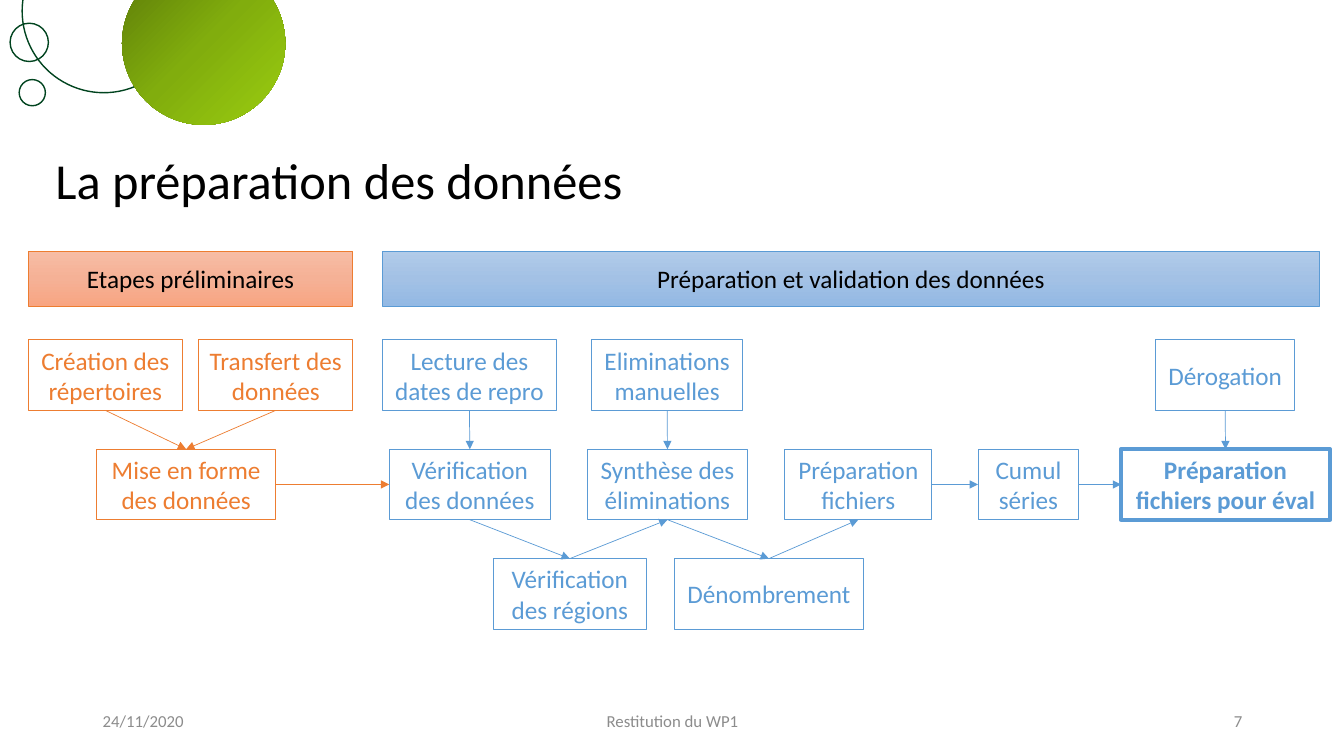
from copy import deepcopy

from pptx import Presentation
from pptx.dml.color import RGBColor
from pptx.enum.shapes import MSO_CONNECTOR as CONN, MSO_SHAPE as SHAPE
from pptx.enum.text import MSO_ANCHOR as ANCHOR, PP_ALIGN as ALIGN
from pptx.oxml.ns import qn
from pptx.util import Inches, Pt

ORANGE, BLUE, BLACK, GREY, GREEN = "ED7D31", "5B9BD5", "000000", "8C8C8C", "01441F"
BOTTOM, RIGHT, TOP, LEFT = 2, 3, 0, 1


def rgb(value):
    return RGBColor.from_string(value)


class Deck:
    """Style and current slide; lengths are percentages of the slide's size."""
    font = "Calibri"

    def __init__(self, prs):
        self.w, self.h = prs.slide_width, prs.slide_height
        self.s = prs.slides.add_slide(prs.slide_layouts[6])

    def area(self, x, y, w, h):
        return [int(v * side / 100) for v, side in
                ((x, self.w), (y, self.h), (w, self.w), (h, self.h))]

    def set_text(self, sp, text, size, color, align=ALIGN.CENTER, bold=False):
        tf = sp.text_frame
        tf.text = text
        tf.word_wrap = True
        tf.vertical_anchor = ANCHOR.MIDDLE
        p = tf.paragraphs[0]
        p.alignment = align
        f = p.runs[0].font
        f.name, f.size, f.bold = self.font, Pt(size), bold
        f.color.rgb = rgb(color)
        return p

    def gradient(self, sp, colors, angle):
        sp.fill.gradient()
        sp.fill.gradient_angle = -angle % 360
        stops = sp._element.spPr.find(qn("a:gradFill")).find(qn("a:gsLst"))
        stops.insert(1, deepcopy(stops[0]))
        for i, (stop, color) in enumerate(zip(sp.fill.gradient_stops, colors)):
            stop.position = i / 2
            stop.color.rgb = rgb(color)

    def shape(self, kind, area, line=None, width=1, colors=None, angle=90):
        sp = self.s.shapes.add_shape(kind, *area)
        sp.shadow.inherit = False
        if colors:
            self.gradient(sp, colors, angle)
        else:
            sp.fill.background()
        if line:
            sp.line.color.rgb = rgb(line)
            sp.line.width = Pt(width)
        else:
            sp.line.fill.background()
        return sp

    def circle(self, x, y, size, **style):
        left, top, d, _ = self.area(x, y, size, 0)
        return self.shape(SHAPE.OVAL, (left, top, d, d), **style)

    def box(self, text, x, y, w, h, line, width=0.75, color=None, bold=False, colors=None):
        sp = self.shape(SHAPE.RECTANGLE, self.area(x, y, w, h), line, width, colors)
        self.set_text(sp, text, 18, color or line, bold=bold)
        return sp

    def label(self, text, x, y, w, h, size, color, align):
        sp = self.s.shapes.add_textbox(*self.area(x, y, w, h))
        return self.set_text(sp, text, size, color, align)

    def arrow(self, a, a_side, b, b_side, color):
        c = self.s.shapes.add_connector(CONN.STRAIGHT, 0, 0, 0, 0)
        c.begin_connect(a, a_side)
        c.end_connect(b, b_side)
        c.line.color.rgb = rgb(color)
        c.line.width = Pt(0.5)
        spPr = c._element.spPr
        ln = spPr.find(qn("a:ln"))
        ln.append(ln.makeelement(qn("a:tailEnd"), {"type": "triangle"}))
        spPr.append(spPr.makeelement(qn("a:effectLst"), {}))


def main():
    prs = Presentation()
    prs.slide_width, prs.slide_height = Inches(13.33), Inches(7.5)
    deck = Deck(prs)

    # Corner circles
    deck.circle(1.65, -9.33, 12.15, line=GREEN)
    deck.circle(9.08, -5.07, 12.15, colors=("5B7A09", "81AD0D", "9ACD10"), angle=45)
    deck.circle(0.75, 3.07, 2.85, line=GREEN)
    deck.circle(1.43, 10.53, 1.95, line=GREEN)

    # Title
    p = deck.label("La préparation des données", 3.38, 18.4, 86.27, 11.73, 36, BLACK, ALIGN.LEFT)
    p.line_spacing = 0.9

    # Phase headers
    for text, x, w, line, colors in (
            ("Etapes préliminaires", 2.1, 24.16, ORANGE, ("F7BDA5", "F5B196", "F8A582")),
            ("Préparation et validation des données", 28.43, 69.77, BLUE,
             ("B1CBE9", "A3C1E5", "93B9E4"))):
        deck.box(text, x, 33.2, w, 7.3, line, 0.5, BLACK, colors=colors)

    # Steps: name, text, left, row, width, colour
    steps = (
        ("creation", "Création des répertoires", 2.1, 0, 11.48, ORANGE),
        ("transfert", "Transfert des données", 14.78, 0, 11.48, ORANGE),
        ("forme", "Mise en forme des données", 7.2, 1, 13.3, ORANGE),
        ("lecture", "Lecture des dates de repro", 28.43, 0, 13, BLUE),
        ("verif", "Vérification des données", 28.96, 1, 12, BLUE),
        ("regions", "Vérification des régions", 36.7, 2, 11.4, BLUE),
        ("elimin", "Eliminations manuelles", 44.04, 0, 11.2, BLUE),
        ("synthese", "Synthèse des éliminations", 43.74, 1, 11.85, BLUE),
        ("denomb", "Dénombrement", 50.2, 2, 14.03, BLUE),
        ("fichiers", "Préparation fichiers", 58.38, 1, 10.97, BLUE),
        ("cumul", "Cumul séries", 72.77, 1, 7.5, BLUE),
        ("derog", "Dérogation", 85.97, 0, 10.38, BLUE),
        ("eval", "Préparation fichiers pour éval", 83.42, 1, 15.53, BLUE),
    )
    boxes = {}
    for name, text, x, row, w, color in steps:
        final = name == "eval"
        boxes[name] = deck.box(text, x, 44.95 + 14.47 * row, w, 9.33, color,
                               3 if final else 0.75, bold=final)

    # Flow arrows
    for a, b, a_side, b_side, color in (
            ("creation", "forme", BOTTOM, TOP, ORANGE),
            ("transfert", "forme", BOTTOM, TOP, ORANGE),
            ("forme", "verif", RIGHT, LEFT, ORANGE),
            ("lecture", "verif", BOTTOM, TOP, BLUE),
            ("verif", "regions", BOTTOM, TOP, BLUE),
            ("regions", "synthese", TOP, BOTTOM, BLUE),
            ("elimin", "synthese", BOTTOM, TOP, BLUE),
            ("synthese", "denomb", BOTTOM, TOP, BLUE),
            ("denomb", "fichiers", TOP, BOTTOM, BLUE),
            ("fichiers", "cumul", RIGHT, LEFT, BLUE),
            ("cumul", "eval", RIGHT, LEFT, BLUE),
            ("derog", "eval", BOTTOM, TOP, BLUE)):
        deck.arrow(boxes[a], a_side, boxes[b], b_side, color)

    # Footer
    for text, x, w, align in (("24/11/2020", 6.9, 22.5, ALIGN.LEFT),
                              ("Restitution du WP1", 33.16, 33.76, ALIGN.CENTER),
                              ("7", 70.67, 22.5, ALIGN.RIGHT)):
        deck.label(text, x, 92.67, w, 5.33, 12, GREY, align)

    prs.save("out.pptx")


if __name__ == "__main__":
    main()
